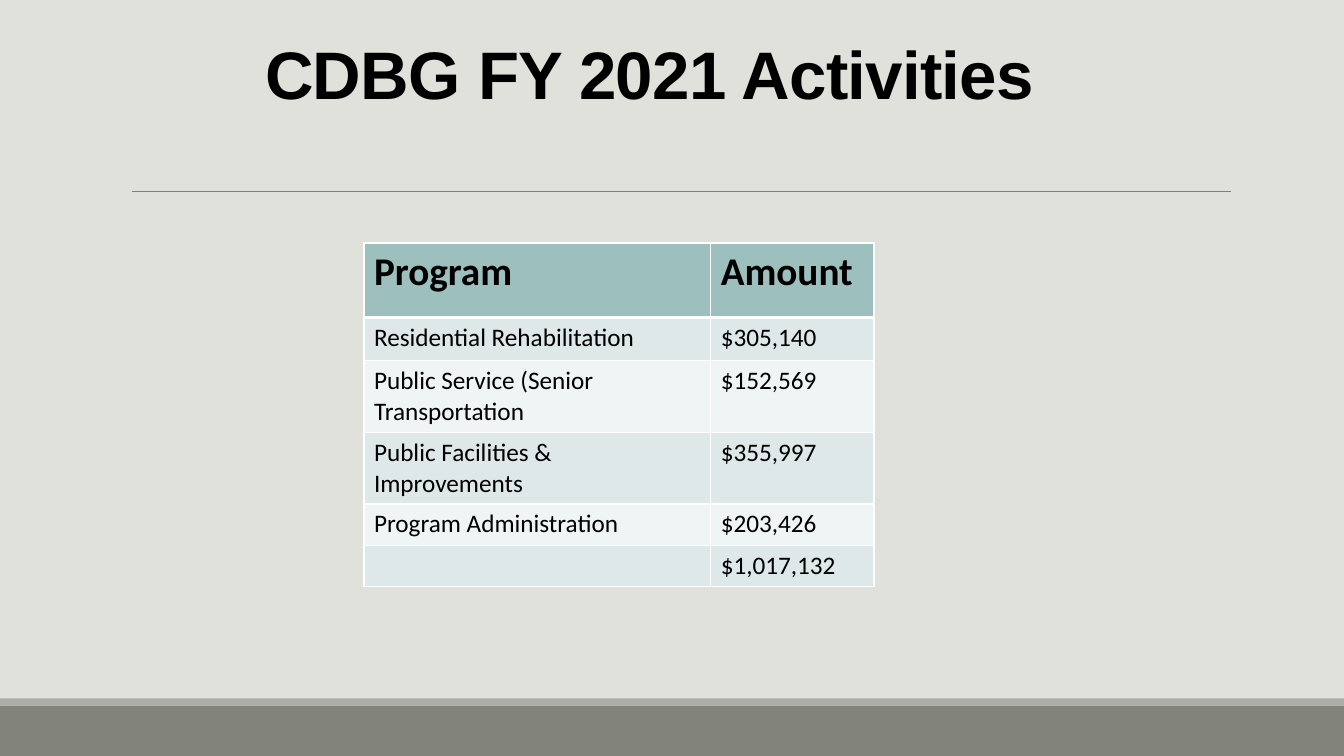
from lxml.etree import SubElement
from pptx import Presentation
from pptx.dml.color import RGBColor
from pptx.enum.shapes import MSO_CONNECTOR, MSO_SHAPE
from pptx.oxml.ns import qn
from pptx.util import Inches, Pt

TITLE = "CDBG FY 2021 Activities"
ROWS = [
    ("Program", "Amount"),
    ("Residential Rehabilitation", "$305,140"),
    ("Public Service (Senior Transportation", "$152,569"),
    ("Public Facilities & Improvements", "$355,997"),
    ("Program Administration", "$203,426"),
    ("", "$1,017,132"),
]
WIDTHS = [3.44, 1.62]
HEIGHTS = [0.74, 0.43, 0.71, 0.71, 0.41, 0.41]
HEAD, BANDS = "9DBFBE", ["DFE8E8", "EFF4F4"]
BARS = [(7, 0.5, "82847C"), (6.93, 0.07, "ACADA8")]
WIDE = 13.33


def paint(fill, color):
    fill.solid()
    fill.fore_color.rgb = RGBColor.from_string(color)


def style(para, font, size, bold):
    para.font.name = font
    para.font.size = Pt(size)
    para.font.bold = bold
    paint(para.font.fill, "000000")


def edge(cell, side, points):
    """Draw a white border on one side (L, R, T or B) of a cell."""
    props = cell._tc.get_or_add_tcPr()
    line = SubElement(props, qn(f"a:ln{side}"), w=str(Pt(points)))
    fill = SubElement(line, qn("a:solidFill"))
    SubElement(fill, qn("a:srgbClr"), val="FFFFFF")


def add_frame(slide):
    paint(slide.background.fill, "E1E1DB")
    for top, height, color in BARS:
        bar = slide.shapes.add_shape(
            MSO_SHAPE.RECTANGLE, 0, Inches(top), Inches(WIDE), Inches(height))
        bar.shadow.inherit = False
        paint(bar.fill, color)
        bar.line.fill.background()
    rule = slide.shapes.add_connector(
        MSO_CONNECTOR.STRAIGHT, Inches(1.31), Inches(1.9), Inches(12.21), Inches(1.9))
    paint(rule.line.fill, "808080")
    rule.line.width = Pt(0.5)
    SubElement(rule._element.spPr, qn("a:effectLst"))


def add_title(slide):
    box = slide.shapes.add_textbox(Inches(1.2), Inches(0.31), Inches(11), Inches(1.59))
    frame = box.text_frame
    frame.word_wrap = True
    frame.margin_left = Inches(1.43)
    frame.margin_top = Inches(0.01)
    para = frame.paragraphs[0]
    run = para.add_run()
    run.text = TITLE
    run._r.get_or_add_rPr().set("spc", "-50")
    style(para, "Arial", 48, True)


def add_grid(slide):
    table = slide.shapes.add_table(
        len(ROWS), len(WIDTHS), Inches(3.61), Inches(2.41),
        Inches(sum(WIDTHS)), Inches(sum(HEIGHTS))).table
    for col, width in zip(table.columns, WIDTHS):
        col.width = Inches(width)
    for i, (texts, height) in enumerate(zip(ROWS, HEIGHTS)):
        table.rows[i].height = Inches(height)
        for j, text in enumerate(texts):
            cell = table.cell(i, j)
            cell.text = text
            style(cell.text_frame.paragraphs[0], "Calibri", 18 if i else 28, i == 0)
            for side in "LRTB":
                heavy = (i, side) in [(0, "B"), (1, "T")]
                edge(cell, side, 3 if heavy else 1)
            paint(cell.fill, BANDS[(i - 1) % 2] if i else HEAD)


def main():
    deck = Presentation()
    deck.slide_width, deck.slide_height = Inches(WIDE), Inches(7.5)
    slide = deck.slides.add_slide(deck.slide_layouts[6])
    add_frame(slide)
    add_title(slide)
    add_grid(slide)
    deck.save("out.pptx")


if __name__ == "__main__":
    main()
